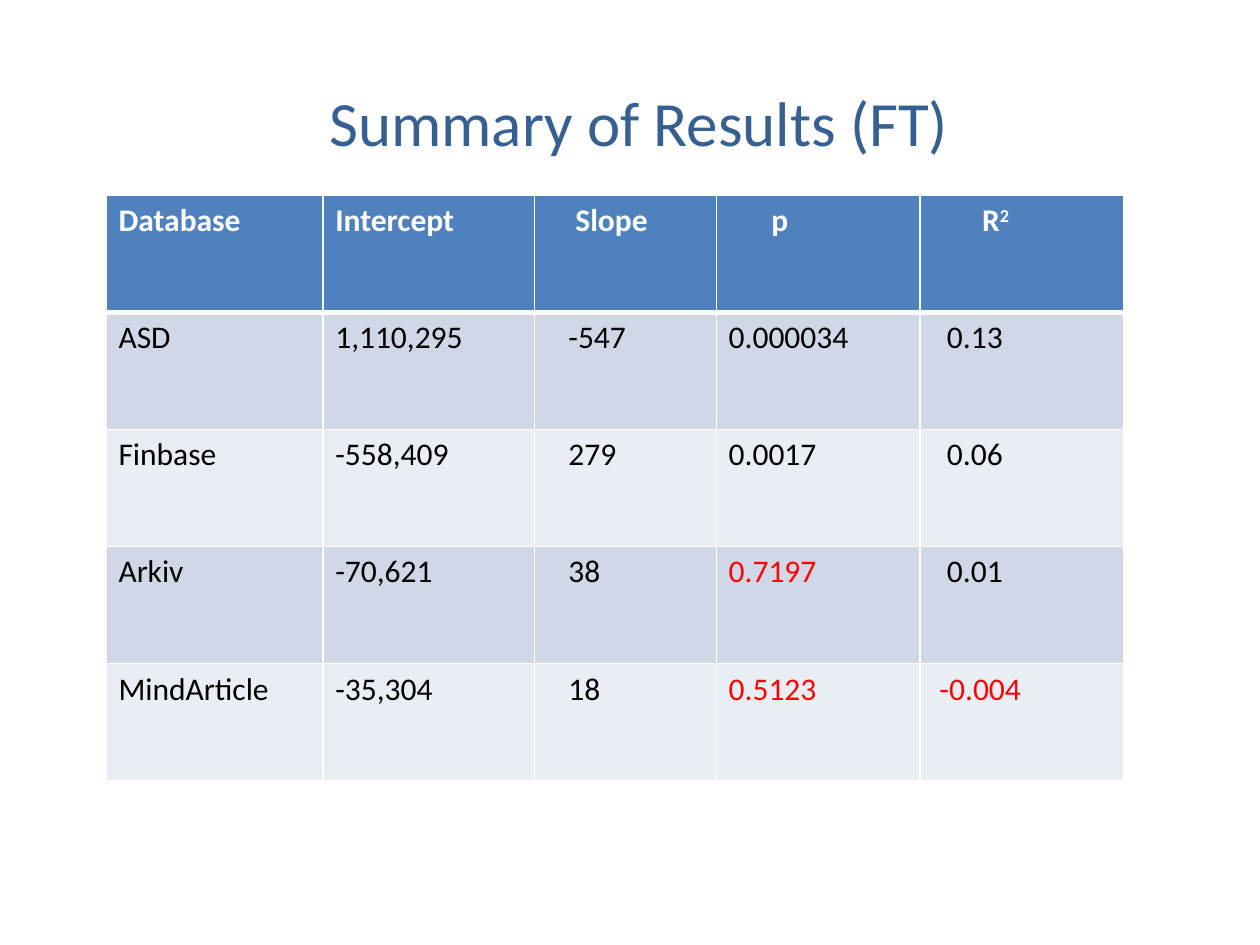
import pptx
import pptx.util
import pptx.dml.color
import pptx.enum.text
import pptx.oxml
import pptx.oxml.ns

Cm = pptx.util.Cm
Pt = pptx.util.Pt
RGBColor = pptx.dml.color.RGBColor

TITLE_BLUE = RGBColor(0x37, 0x60, 0x92)
HEADER_BLUE = RGBColor(0x4F, 0x81, 0xBD)
BAND_DARK = RGBColor(0xD0, 0xD8, 0xE8)
BAND_LIGHT = RGBColor(0xE9, 0xED, 0xF4)
WHITE = RGBColor(0xFF, 0xFF, 0xFF)
BLACK = RGBColor(0, 0, 0)
RED = RGBColor(0xFF, 0, 0)

ROWS = [
    ["Database", "Intercept", "Slope", "p", "R"],
    ["ASD", "1,110,295", "-547", "0.000034", "0.13"],
    ["Finbase", "-558,409", "279", "0.0017", "0.06"],
    ["Arkiv", "-70,621", "38", "0.7197", "0.01"],
    ["MindArticle", "-35,304", "18", "0.5123", "-0.004"],
]
RED_VALUES = {"0.7197", "0.5123", "-0.004"}
COLUMN_WIDTHS = [4.37, 4.27, 3.66, 4.11, 4.11]
ROW_HEIGHT = 2.36
HEADER_INDENTS = [0, 0, 0.57, 0.86, 1]
BODY_INDENTS = [0, 0, 0.43, 0, 0.29]
CELL_MARGIN = 0.25


def set_format(target, values):
    for name, value in values.items():
        setattr(target, name, value)


def add_border(cell, side, width):
    cell._tc.get_or_add_tcPr().append(pptx.oxml.parse_xml(
        f'<a:ln{side} {pptx.oxml.ns.nsdecls("a")} w="{Pt(width)}">'
        f'<a:solidFill><a:srgbClr val="{WHITE}"/></a:solidFill></a:ln{side}>'))


deck = pptx.Presentation()
set_format(deck, {"slide_width": Cm(25.4), "slide_height": Cm(19.05)})
page = deck.slides.add_slide(deck.slide_layouts[5])

# Title
title = page.shapes.title
set_format(title, {"left": Cm(1.45), "top": Cm(0.86),
                   "width": Cm(22.86), "height": Cm(3.18)})
title.text_frame.vertical_anchor = pptx.enum.text.MSO_ANCHOR.MIDDLE
para = title.text_frame.paragraphs[0]
para.alignment = pptx.enum.text.PP_ALIGN.CENTER
span = para.add_run()
span.text = "Summary of Results (FT)"
set_format(span.font, {"name": "Calibri", "size": Pt(36)})
span.font.color.rgb = TITLE_BLUE

# Results table
table = page.shapes.add_table(
    len(ROWS), len(COLUMN_WIDTHS), Cm(2.14), Cm(3.94),
    Cm(sum(COLUMN_WIDTHS)), Cm(ROW_HEIGHT * len(ROWS))).table
for column, width in zip(table.columns, COLUMN_WIDTHS):
    column.width = Cm(width)

for row_index, values in enumerate(ROWS):
    table.rows[row_index].height = Cm(ROW_HEIGHT)
    is_header = row_index == 0
    indents = HEADER_INDENTS if is_header else BODY_INDENTS
    band = BAND_DARK if row_index % 2 else BAND_LIGHT
    for column_index, value in enumerate(values):
        cell = table.cell(row_index, column_index)
        # Negative figures in the last column start further left
        indent = 0.14 if value == "-0.004" else indents[column_index]
        cell.margin_left = Cm(CELL_MARGIN + indent)

        # White grid, heavier under the header
        borders = {"L": 1, "R": 1, "T": 3 if row_index == 1 else 1,
                   "B": 3 if is_header else 1}
        for side, width in borders.items():
            add_border(cell, side, width)
        cell.fill.solid()
        cell.fill.fore_color.rgb = HEADER_BLUE if is_header else band

        # Text, with the raised 2 after R
        para = cell.text_frame.paragraphs[0]
        for text in [value, "2"] if value == "R" else [value]:
            span = para.add_run()
            span.text = text
            set_format(span.font, {"name": "Calibri", "size": Pt(18),
                                   "bold": is_header})
            span.font.color.rgb = (WHITE if is_header else
                                   RED if value in RED_VALUES else BLACK)
        if value == "R":
            span.font._element.set("baseline", "30000")

deck.save("out.pptx")
